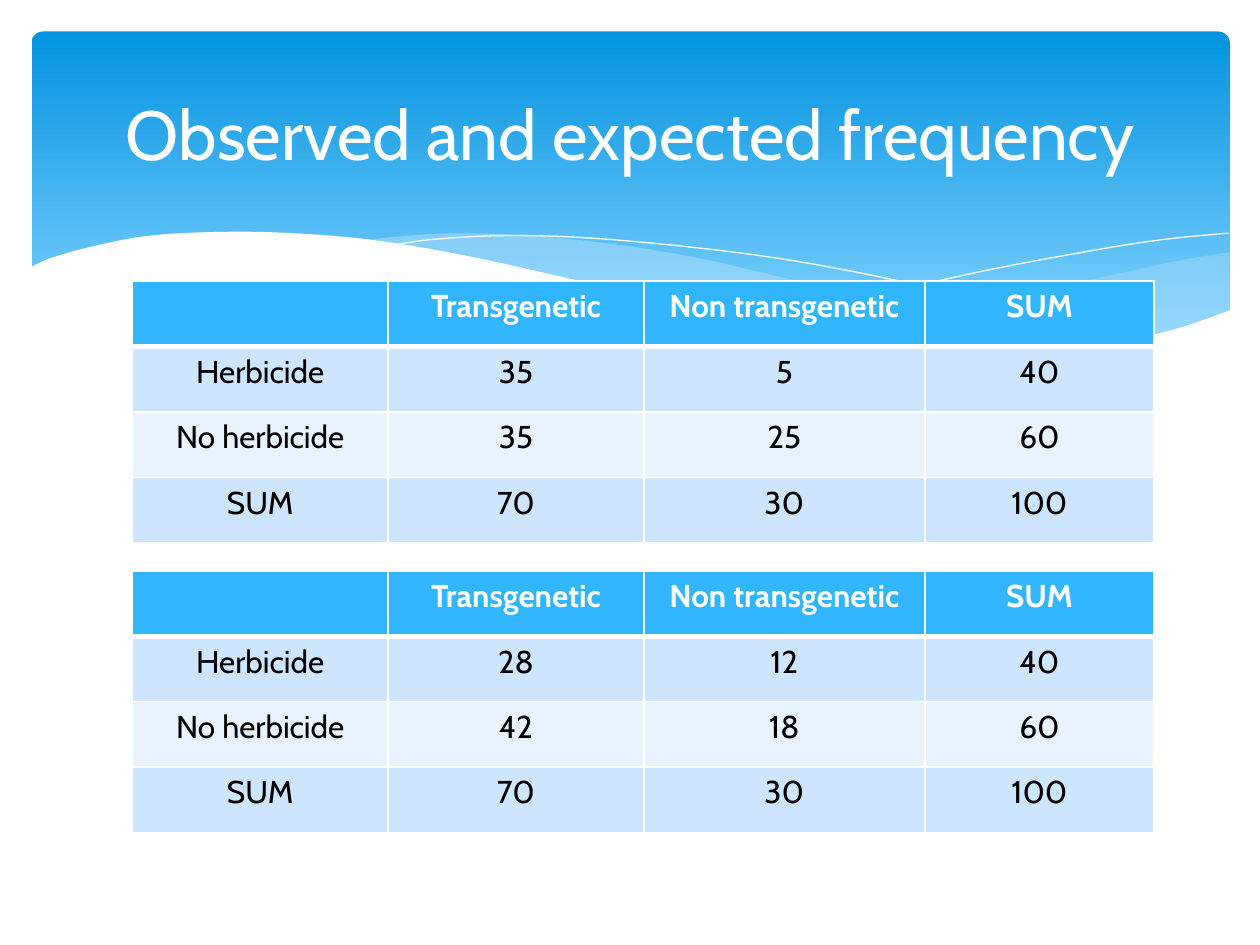
"""Build a slide with observed and expected frequency tables under a wave banner."""
from dataclasses import dataclass

from lxml import etree
from pptx import Presentation
from pptx.dml.color import RGBColor
from pptx.enum.shapes import MSO_SHAPE
from pptx.enum.text import MSO_ANCHOR, MSO_AUTO_SIZE, PP_ALIGN
from pptx.oxml.ns import qn
from pptx.util import Inches, Pt

ROUND_RECTANGLE = MSO_SHAPE.ROUNDED_RECTANGLE
MIDDLE, CENTER, NO_FIT = MSO_ANCHOR.MIDDLE, PP_ALIGN.CENTER, MSO_AUTO_SIZE.NONE


@dataclass(frozen=True)
class Theme:
    font: str = "Cabin"
    title_size: float = 39.6
    cell_size: float = 18
    white: str = "FFFFFF"
    black: str = "000000"
    banner_top: str = "0293E0"
    banner_bottom: str = "83D3FE"
    wave: str = "C6E7FC"
    header: str = "31B6FD"
    bands: tuple = ("CEE5FE", "E8F3FF")


THEME = Theme()
TITLE = "Observed and expected frequency"
HEADER = ["", "Transgenetic", "Non transgenetic", "SUM"]
ROW_NAMES = ["Herbicide", "No herbicide", "SUM"]
OBSERVED = [(35, 5, 40), (35, 25, 60), (70, 30, 100)]
EXPECTED = [(28, 12, 40), (42, 18, 60), (70, 30, 100)]

TABLE_LEFT, ROW_HEIGHT = 1.05, 0.52
COLUMN_WIDTHS = [2.03, 2.03, 2.23, 1.82]
TABLES = [(2.23, OBSERVED), (4.53, EXPECTED)]

RIGHT_WAVE = [
    [(9.76, 2), (9.35, 2.07), (8.61, 2.23), (7.79, 2.42), (7.06, 2.57), (6.61, 2.65)],
    [(6.61, 2.65), (7.05, 2.71), (7.57, 2.76), (8.14, 2.78), (8.63, 2.75),
     (9.05, 2.69), (9.42, 2.59), (9.76, 2.47)],
]
MIDDLE_WAVE = [
    [(8.93, 2.73), (8.37, 2.65), (7.41, 2.47), (6.29, 2.22), (5.55, 2.05),
     (4.89, 1.94), (4.2, 1.87), (3.61, 1.85), (3.13, 1.88), (2.86, 1.91)],
    [(2.86, 1.91), (3.62, 2.03), (4.49, 2.22), (5.3, 2.4), (6.01, 2.55),
     (6.8, 2.68), (7.48, 2.76), (8.07, 2.78), (8.57, 2.77), (8.93, 2.73)],
]
FRONT_WAVE = [
    [(9.77, 2.46), (9.3, 2.62), (8.75, 2.73), (8.09, 2.77), (7.26, 2.72),
     (6.26, 2.58), (5.29, 2.39), (4.47, 2.2), (3.65, 2.02), (2.92, 1.9),
     (2.3, 1.85), (1.77, 1.84), (1.19, 1.87), (0.76, 1.95), (0.4, 2.05), (0.23, 2.13)],
    [(0.23, 3.29), (9.77, 3.29)],
]
LEFT_LINE = [[(3.09, 1.95), (3.44, 1.9), (4.01, 1.87), (4.69, 1.89), (5.56, 1.97),
              (6.36, 2.08), (7.27, 2.26), (8.31, 2.51), (9.07, 2.72)]]
RIGHT_LINE = [[(6.13, 2.57), (6.95, 2.35), (7.76, 2.16), (8.66, 1.99),
               (9.24, 1.9), (9.75, 1.85)]]
WAVES = [
    (RIGHT_WAVE, THEME.wave, 29),
    (MIDDLE_WAVE, THEME.wave, 40),
    (LEFT_LINE, None, 100),
    (RIGHT_LINE, None, 100),
    (FRONT_WAVE, THEME.white, 100),
]


def color(value):
    return RGBColor.from_string(value)


def smooth(knots, steps=5):
    """Return points on a Catmull-Rom curve through the knots."""
    if len(knots) < 3:
        return knots
    padded = [knots[0], *knots, knots[-1]]
    points = [knots[0]]
    for a, b, c, d in zip(padded, padded[1:], padded[2:], padded[3:]):
        for step in range(1, steps + 1):
            t = step / steps
            points.append(tuple(
                (2 * q + (r - p) * t + (2 * p - 5 * q + 4 * r - s) * t ** 2
                 + (3 * q - p - 3 * r + s) * t ** 3) / 2
                for p, q, r, s in zip(a, b, c, d)))
    return points


def add_banner(page):
    banner = page.shapes.add_shape(
        ROUND_RECTANGLE, *map(Inches, (0.25, 0.25, 9.51, 2.7)))
    banner.adjustments[0] = 0.034
    banner.shadow.inherit = False
    banner.line.fill.background()
    banner.fill.gradient()
    banner.fill.gradient_angle = 270
    stops = [(0, THEME.banner_top), (0.9, THEME.banner_bottom)]
    for stop, (position, value) in zip(banner.fill.gradient_stops, stops):
        stop.position = position
        stop.color.rgb = color(value)


def add_wave(page, edges, fill, opacity):
    points = [(Inches(x), Inches(y)) for edge in edges for x, y in smooth(edge)]
    builder = page.shapes.build_freeform(*points[0])
    builder.add_line_segments(points[1:], close=fill is not None)
    wave = builder.convert_to_shape()
    wave.shadow.inherit = False
    if fill is None:
        wave.fill.background()
        wave.line.color.rgb = color(THEME.white)
        wave.line.width = 0
        return
    wave.line.fill.background()
    wave.fill.solid()
    wave.fill.fore_color.rgb = color(fill)
    if opacity < 100:
        tint = wave._element.spPr.find(qn("a:solidFill"))[0]
        etree.SubElement(tint, qn("a:alpha"), val=str(opacity * 1000))


def write(frame, text, size, value, bold=False):
    para = frame.paragraphs[0]
    para.alignment = CENTER
    span = para.add_run()
    span.text = text
    span.font.color.rgb = color(value)
    for name, setting in {"name": THEME.font, "size": Pt(size), "bold": bold}.items():
        setattr(span.font, name, setting)


def add_borders(cell, widths):
    properties = cell._tc.get_or_add_tcPr()
    for side, width in widths.items():
        line = etree.SubElement(properties, qn(f"a:ln{side}"), w=str(Pt(width)))
        fill = etree.SubElement(line, qn("a:solidFill"))
        etree.SubElement(fill, qn("a:srgbClr"), val=THEME.white)


def add_frequency_table(page, top, counts):
    rows = [HEADER] + [[name, *values] for name, values in zip(ROW_NAMES, counts)]
    size = sum(COLUMN_WIDTHS), ROW_HEIGHT * len(rows)
    table = page.shapes.add_table(
        len(rows), len(HEADER), *map(Inches, (TABLE_LEFT, top, *size))).table
    for column, width in zip(table.columns, COLUMN_WIDTHS):
        column.width = Inches(width)
    for r, row in enumerate(rows):
        is_header = r == 0
        fill = THEME.header if is_header else THEME.bands[(r - 1) % 2]
        ink = THEME.white if is_header else THEME.black
        borders = {"L": 1, "R": 1, "T": 3 if r == 1 else 1, "B": 3 if is_header else 1}
        for c, value in enumerate(row):
            cell = table.cell(r, c)
            add_borders(cell, borders)
            cell.fill.solid()
            cell.fill.fore_color.rgb = color(fill)
            if value != "":
                write(cell.text_frame, str(value), THEME.cell_size, ink, is_header)


def add_title(page):
    title = page.shapes.title
    box = {"left": 0.5, "top": 0.37, "width": 9, "height": 1.37}
    for name, length in box.items():
        setattr(title, name, Inches(length))
    frame = title.text_frame
    for name, setting in {"auto_size": NO_FIT, "vertical_anchor": MIDDLE,
                          "word_wrap": True}.items():
        setattr(frame, name, setting)
    write(frame, TITLE, THEME.title_size, THEME.white)
    page.shapes._spTree.append(title._element)


def main():
    deck = Presentation()
    deck.slide_width, deck.slide_height = Inches(10), Inches(7.5)
    page = deck.slides.add_slide(deck.slide_layouts[5])
    add_banner(page)
    for wave in WAVES:
        add_wave(page, *wave)
    add_title(page)
    for top, counts in TABLES:
        add_frequency_table(page, top, counts)
    deck.save("out.pptx")


if __name__ == "__main__":
    main()
